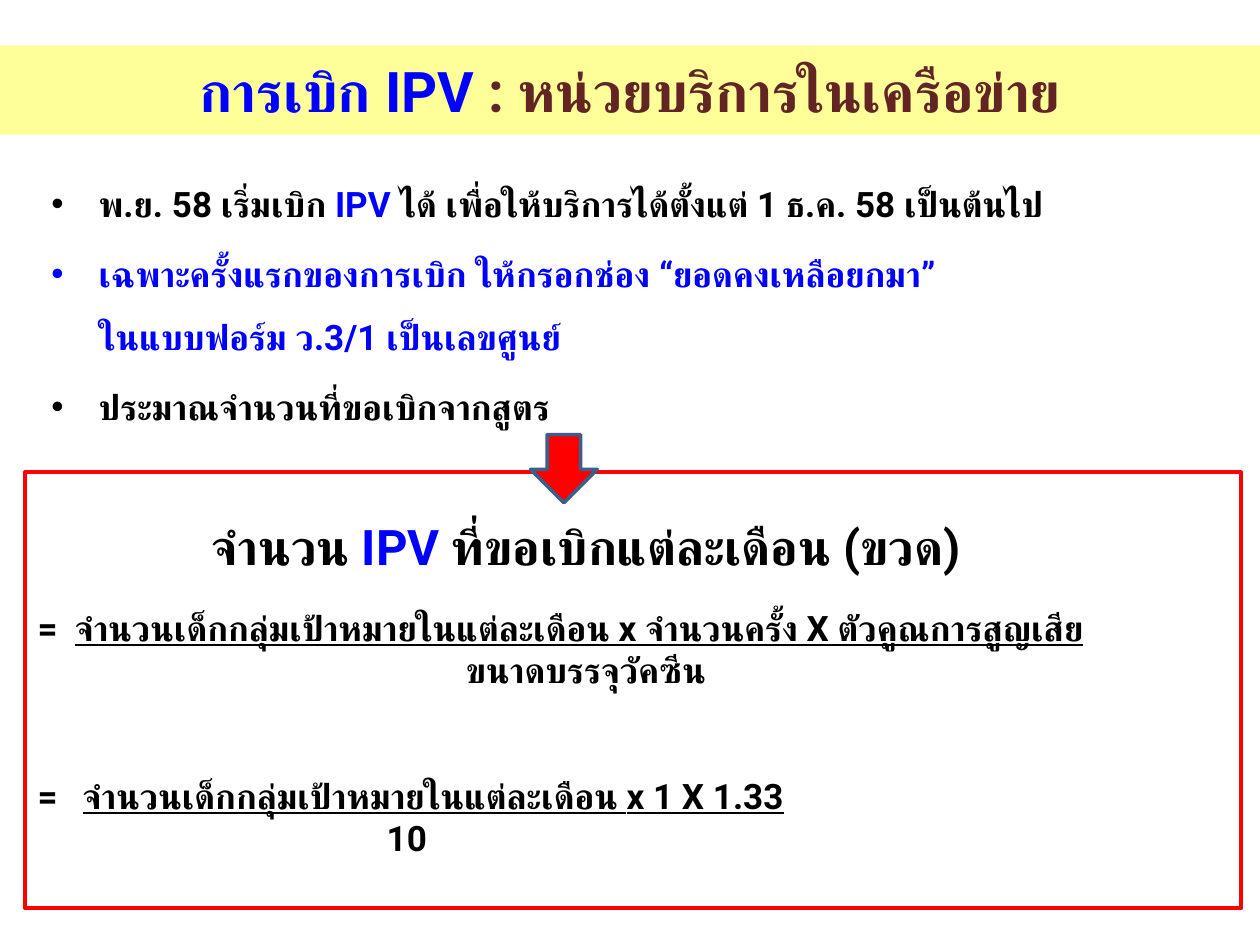
from lxml import etree
from pptx import Presentation
from pptx.dml.color import RGBColor
from pptx.enum.shapes import MSO_SHAPE
from pptx.enum.text import MSO_ANCHOR, PP_ALIGN
from pptx.oxml.ns import qn
from pptx.util import Pt

RECTANGLE, DOWN_ARROW = MSO_SHAPE.RECTANGLE, MSO_SHAPE.DOWN_ARROW
TOP, MIDDLE = MSO_ANCHOR.TOP, MSO_ANCHOR.MIDDLE
LEFT, CENTER = PP_ALIGN.LEFT, PP_ALIGN.CENTER

BLACK = RGBColor(0x00, 0x00, 0x00)
BLUE = RGBColor(0x00, 0x00, 0xFF)
BROWN = RGBColor(0x63, 0x25, 0x23)
RED = RGBColor(0xFF, 0x00, 0x00)
STEEL = RGBColor(0x3A, 0x5F, 0x8C)
YELLOW = RGBColor(0xFF, 0xFF, 0x99)
FONT = "Roboto"
BODY_SIZE = 20


def add_box(page, kind, box, fill=None, line=None, width=0):
    shape = page.shapes.add_shape(kind, *map(Pt, box))
    shape.shadow.inherit = False
    if fill is None:
        shape.fill.background()
    else:
        shape.fill.solid()
        shape.fill.fore_color.rgb = fill
    if line is None:
        shape.line.fill.background()
    else:
        shape.line.color.rgb = line
        shape.line.width = Pt(width)
    return shape


def add_text_frame(page, box):
    frame = page.shapes.add_textbox(*map(Pt, box)).text_frame
    frame.word_wrap = True
    return frame


def write_para(frame, index, spans, size=BODY_SIZE, align=LEFT):
    """Write (text, colour, underlined) spans into the paragraph at index."""
    para = frame.paragraphs[0] if index == 0 else frame.add_paragraph()
    para.alignment = align
    for text, colour, underlined in spans:
        for number, line in enumerate(text.split("\n")):
            if number:
                para.add_line_break()
            span = para.add_run()
            span.text = line
            font = span.font
            font.name, font.size, font.bold = FONT, Pt(size), True
            font.color.rgb = colour
            font.underline = underlined
            etree.SubElement(span._r.get_or_add_rPr(), qn("a:cs"), typeface=FONT)
    return para


def set_indent(para, left, first=0):
    props = para._p.get_or_add_pPr()
    props.set("marL", str(Pt(left)))
    props.set("indent", str(Pt(first)))
    return props


def set_tabs(para, stops):
    tabs = etree.SubElement(para._p.get_or_add_pPr(), qn("a:tabLst"))
    for stop in stops:
        etree.SubElement(tabs, qn("a:tab"), pos=str(Pt(stop)), algn="l")


def add_title_band(page, box):
    frame = add_box(page, RECTANGLE, box, fill=YELLOW).text_frame
    frame.vertical_anchor = MIDDLE
    spans = [("การเบิก IPV ", BLUE, False), (": หน่วยบริการในเครือข่าย", BROWN, False)]
    write_para(frame, 0, spans, size=32, align=CENTER)


def add_bullets(page, box):
    items = [
        [("พ.ย. 58 เริ่มเบิก ", BLACK, False), ("IPV ", BLUE, False),
         ("ได้ เพื่อให้บริการได้ตั้งแต่ 1 ธ.ค. 58 เป็นต้นไป", BLACK, False)],
        [("เฉพาะครั้งแรกของการเบิก ให้กรอกช่อง “ยอดคงเหลือยกมา” \n"
          "ในแบบฟอร์ม ว.3/1 เป็นเลขศูนย์", BLUE, False)],
        [("ประมาณจำนวนที่ขอเบิกจากสูตร", BLACK, False)],
    ]
    frame = add_text_frame(page, box)
    for index, spans in enumerate(items):
        para = write_para(frame, index, spans)
        para.line_spacing = 1.5
        para.space_before = Pt(0.2 * BODY_SIZE)
        props = set_indent(para, 27, -27)
        etree.SubElement(props, qn("a:buFont"), typeface="Arial")
        etree.SubElement(props, qn("a:buChar"), char="•")


def add_formula_panel(page, box):
    # Numerator, its tab stops, denominator, denominator indent
    fractions = [
        ("จำนวนเด็กกลุ่มเป้าหมายในแต่ละเดือน x จำนวนครั้ง X ตัวคูณการสูญเสีย",
         [21.3], "ขนาดบรรจุวัคซีน", 244.7),
        ("จำนวนเด็กกลุ่มเป้าหมายในแต่ละเดือน x 1 X 1.33\t",
         [25.8, 457.3], "10", 199.5),
    ]
    frame = add_box(page, RECTANGLE, box, line=RED, width=2.25).text_frame
    frame.vertical_anchor = TOP
    frame.margin_top = Pt(76.6)
    for number, (numerator, stops, denominator, indent) in enumerate(fractions):
        spans = [("=\t", BLACK, False), (numerator, BLACK, True)]
        para = write_para(frame, 2 * number, spans)
        set_tabs(para, stops)
        if number:
            para.space_before = Pt(48)
        para = write_para(frame, 2 * number + 1, [(denominator, BLACK, False)])
        set_indent(para, indent)


def add_formula_heading(page, box):
    spans = [("จำนวน ", BLACK, False), ("IPV ", BLUE, False),
             ("ที่ขอเบิกแต่ละเดือน (ขวด)", BLACK, False)]
    write_para(add_text_frame(page, box), 0, spans, size=28)


def main():
    deck = Presentation()
    deck.slide_width, deck.slide_height = Pt(720), Pt(540)
    page = deck.slides.add_slide(deck.slide_layouts[6])

    add_bullets(page, (22.3, 88.6, 689, 118.8))
    add_title_band(page, (0, 25.9, 720, 51.1))
    add_formula_panel(page, (14.4, 270, 694.8, 249.1))
    add_formula_heading(page, (113.8, 291.6, 518.4, 74.9))
    # Arrow from the bullets down to the formula
    add_box(page, DOWN_ARROW, (303.1, 248.4, 38.2, 38.9), RED, STEEL, 2)

    deck.save("out.pptx")


if __name__ == "__main__":
    main()
